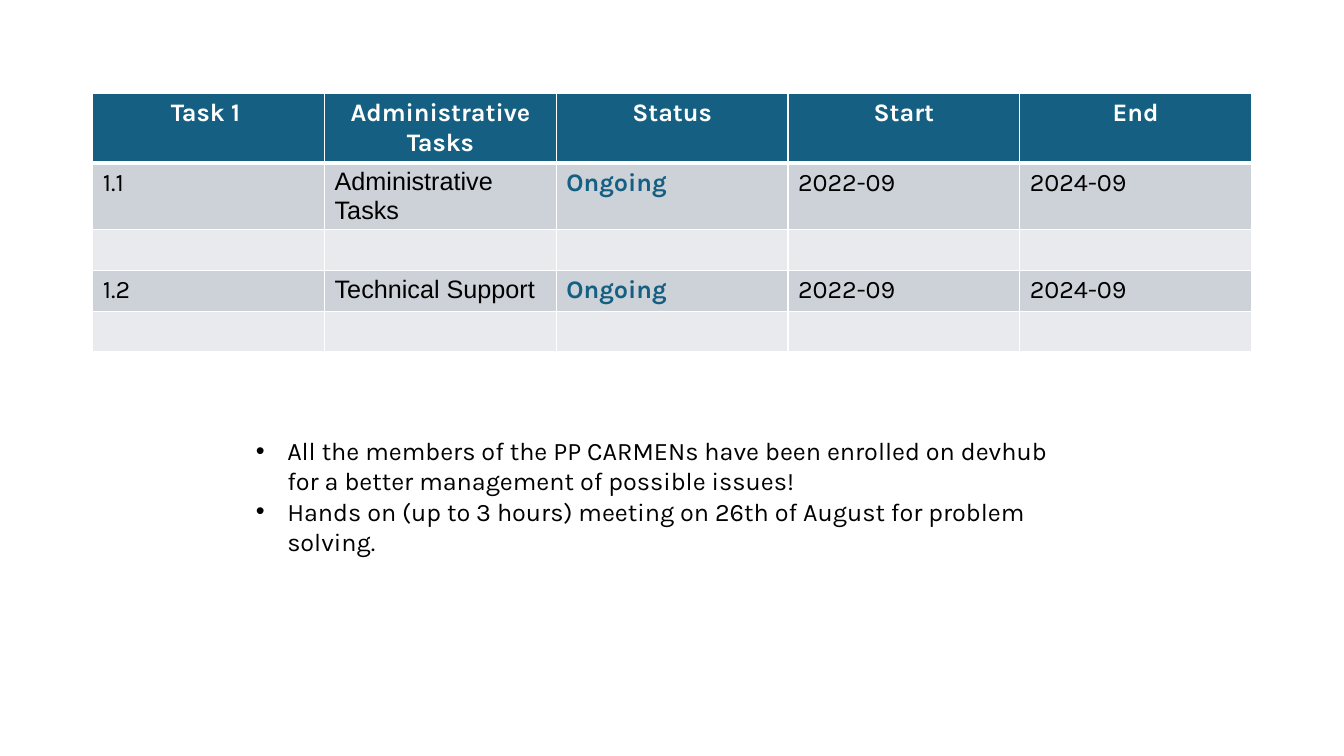
from pptx import Presentation
from pptx.dml.color import RGBColor
from pptx.enum.text import MSO_AUTO_SIZE, PP_ALIGN
from pptx.oxml.ns import qn
from pptx.util import Cm, Pt
from lxml.etree import SubElement

# Content
HEADERS = ("Task 1 ", "Administrative Tasks", "Status", "Start", "End")
EMPTY_ROW = ("",) * len(HEADERS)
ROWS = [
    HEADERS,
    ("1.1", "Administrative Tasks", "Ongoing", "2022-09", "2024-09"),
    EMPTY_ROW,
    ("1.2", "Technical Support", "Ongoing", "2022-09", "2024-09"),
    EMPTY_ROW,
]
NOTES = [
    "All the members of the PP CARMENs have been enrolled on devhub for "
    "a better management of possible issues!",
    "Hands on (up to 3 hours) meeting on 26th of August for problem solving.",
]

# Style
BLUE, WHITE, BLACK = "156082", "FFFFFF", "000000"
BANDS = ("E8EAED", "CCD2D8")
NAME_COLUMN, STATUS_COLUMN = 1, 2
COLUMN_WIDTH, ROW_HEIGHT = 5.84, 1.03
BULLET_INDENT = Cm(0.79)


def color(value):
    return RGBColor.from_string(value)


def format_text(paragraph, font_color, name="Karla", bold=False):
    for run in paragraph.runs:
        run.font.name = name
        run.font.size = Pt(18)
        run.font.bold = bold
        run.font.color.rgb = color(font_color)


def add_borders(cell, bottom_width):
    properties = cell._tc.get_or_add_tcPr()
    for side, width in (("L", 1), ("R", 1), ("T", 1), ("B", bottom_width)):
        line = SubElement(properties, qn(f"a:ln{side}"), w=str(Pt(width)))
        fill = SubElement(line, qn("a:solidFill"))
        SubElement(fill, qn("a:srgbClr"), val=WHITE)


def add_bullet(paragraph):
    properties = paragraph._p.get_or_add_pPr()
    properties.set("marL", str(BULLET_INDENT))
    properties.set("indent", str(-BULLET_INDENT))
    SubElement(properties, qn("a:buFont"), typeface="Arial")
    SubElement(properties, qn("a:buChar"), char="•")


presentation = Presentation()
presentation.slide_width, presentation.slide_height = Cm(33.87), Cm(19.05)
slide = presentation.slides.add_slide(presentation.slide_layouts[6])

# Task table
table = slide.shapes.add_table(
    len(ROWS), len(HEADERS), Cm(2.34), Cm(2.36),
    Cm(COLUMN_WIDTH * len(HEADERS)), Cm(ROW_HEIGHT * len(ROWS))).table
for column in table.columns:
    column.width = Cm(COLUMN_WIDTH)
for row_index, texts in enumerate(ROWS):
    is_header = row_index == 0
    for column_index, text in enumerate(texts):
        cell = table.cell(row_index, column_index)
        add_borders(cell, 3 if is_header else 1)
        cell.fill.solid()
        cell.fill.fore_color.rgb = color(BLUE if is_header else BANDS[row_index % 2])
        cell.text_frame.text = text
        paragraph = cell.text_frame.paragraphs[0]
        if is_header:
            paragraph.alignment = PP_ALIGN.CENTER
            format_text(paragraph, WHITE, bold=True)
        elif column_index == STATUS_COLUMN:
            format_text(paragraph, BLUE, bold=True)
        else:
            font_name = "Arial" if column_index == NAME_COLUMN else "Karla"
            format_text(paragraph, BLACK, font_name)

# Notes
notes_box = slide.shapes.add_textbox(Cm(6.2), Cm(10.85), Cm(21.18), Cm(2.57))
text_frame = notes_box.text_frame
text_frame.word_wrap = True
text_frame.auto_size = MSO_AUTO_SIZE.SHAPE_TO_FIT_TEXT
text_frame.text = "\n".join(NOTES)
for paragraph in text_frame.paragraphs:
    add_bullet(paragraph)
    format_text(paragraph, BLACK)

presentation.save("out.pptx")
